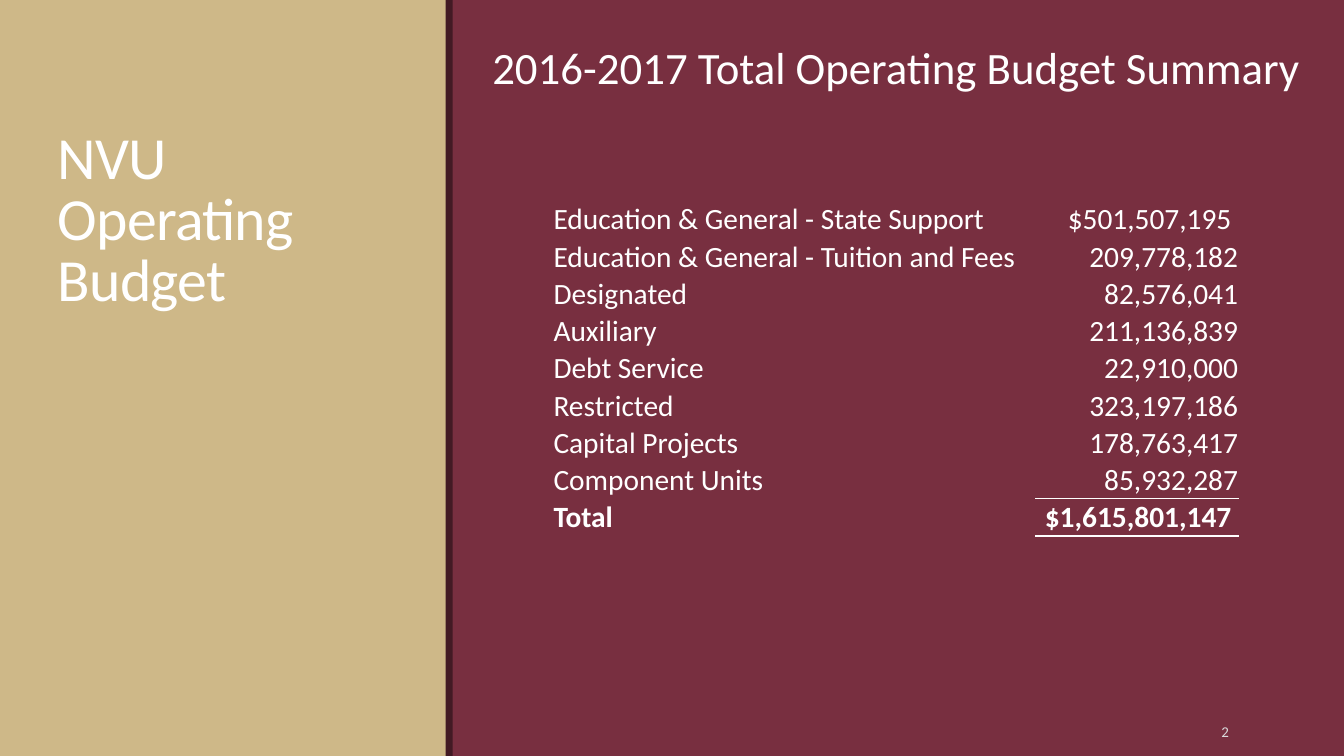
from dataclasses import dataclass

from lxml import etree
from pptx import Presentation
from pptx.dml.color import RGBColor
from pptx.enum.shapes import MSO_SHAPE
from pptx.enum.text import MSO_ANCHOR, PP_ALIGN
from pptx.oxml.ns import qn
from pptx.util import Inches, Pt

RECT = MSO_SHAPE.RECTANGLE
TOP, MIDDLE, BOTTOM = MSO_ANCHOR.TOP, MSO_ANCHOR.MIDDLE, MSO_ANCHOR.BOTTOM
LEFT, CENTER, RIGHT = PP_ALIGN.LEFT, PP_ALIGN.CENTER, PP_ALIGN.RIGHT

FONT = "Calibri"
WHITE = "FFFFFF"
NO_STYLE_NO_GRID = "{2D5ABB26-0587-4C30-8999-92F81FD0307C}"


@dataclass
class Panel:
    left: float
    width: float
    color: str


@dataclass
class Label:
    text: str
    box: tuple[float, float, float, float]
    size: float
    align: PP_ALIGN
    anchor: MSO_ANCHOR
    color: str = WHITE
    inset: tuple[float, float] = (0.07, 0.04)
    line_spacing: float = 1.0
    tracking: float = 0


@dataclass
class BudgetLine:
    name: str
    amount: str
    bold: bool = False
    rule_above: float = 0
    rule_below: float = 0


PANELS = [Panel(0, 4.43, "CEB888"), Panel(4.42, 0.07, "421A24")]

LABELS = [
    Label("NVU \vOperating Budget", (0.5, 0.65, 3.65, 2.5), 42.7, LEFT, BOTTOM,
          line_spacing=0.85, tracking=-0.5),
    Label("2016-2017 Total Operating Budget Summary", (4.69, 0.34, 8.4, 0.64),
          32, CENTER, TOP, inset=(0.1, 0.05)),
    Label("2", (10.83, 7.06, 1.43, 0.4), 10.7, RIGHT, MIDDLE, color="D9D9DB"),
]

BUDGET = [
    BudgetLine("Education & General - State Support", "$501,507,195 "),
    BudgetLine("Education & General - Tuition and Fees", "209,778,182"),
    BudgetLine("Designated", "82,576,041"),
    BudgetLine("Auxiliary", "211,136,839"),
    BudgetLine("Debt Service", "22,910,000"),
    BudgetLine("Restricted", "323,197,186"),
    BudgetLine("Capital Projects", "178,763,417"),
    BudgetLine("Component Units", "85,932,287", rule_below=1),
    BudgetLine("Total", "$1,615,801,147 ", bold=True, rule_above=1, rule_below=2.25),
]
COLUMN_WIDTHS = (4.79, 2.02)
ROW_HEIGHT = 0.37


def rgb(color: str) -> RGBColor:
    return RGBColor.from_string(color)


def style_paragraph(p, size: float, color: str, align: PP_ALIGN, bold: bool = False) -> None:
    p.alignment = align
    p.font.name = FONT
    p.font.size = Pt(size)
    p.font.bold = bold
    p.font.color.rgb = rgb(color)


def add_panel(s, panel: Panel, height: int) -> None:
    sp = s.shapes.add_shape(RECT, Inches(panel.left), 0, Inches(panel.width), height)
    sp.shadow.inherit = False
    sp.fill.solid()
    sp.fill.fore_color.rgb = rgb(panel.color)
    sp.line.fill.background()


def add_label(s, label: Label) -> None:
    tf = s.shapes.add_textbox(*map(Inches, label.box)).text_frame
    tf.word_wrap = True
    tf.vertical_anchor = label.anchor
    tf.margin_left = tf.margin_right = Inches(label.inset[0])
    tf.margin_top = tf.margin_bottom = Inches(label.inset[1])
    p = tf.paragraphs[0]
    p.text = label.text
    p.line_spacing = label.line_spacing
    style_paragraph(p, label.size, label.color, label.align)
    if label.tracking:
        for r in p.runs:
            r._r.get_or_add_rPr().set("spc", str(round(label.tracking * 100)))


def add_rule(cell, side: str, width: float) -> None:
    tc_pr = cell._tc.get_or_add_tcPr()
    ln = etree.SubElement(tc_pr, qn(f"a:ln{side}"), w=str(Pt(width)))
    fill = etree.SubElement(ln, qn("a:solidFill"))
    etree.SubElement(fill, qn("a:srgbClr"), val=WHITE)


def fill_cell(cell, text: str, align: PP_ALIGN, bold: bool) -> None:
    cell.vertical_anchor = MIDDLE
    cell.margin_left = cell.margin_right = cell.margin_top = Inches(0.01)
    cell.margin_bottom = 0
    p = cell.text_frame.paragraphs[0]
    p.text = text
    style_paragraph(p, 21, WHITE, align, bold)


def add_budget_table(s, lines: list[BudgetLine]) -> None:
    frame = s.shapes.add_table(len(lines), len(COLUMN_WIDTHS), Inches(5.48), Inches(1.99),
                               Inches(sum(COLUMN_WIDTHS)), Inches(ROW_HEIGHT * len(lines)))
    table = frame.table
    table.first_row = table.horz_banding = False
    table._tbl.tblPr.find(qn("a:tableStyleId")).text = NO_STYLE_NO_GRID
    for column, width in zip(table.columns, COLUMN_WIDTHS):
        column.width = Inches(width)
    for i, line in enumerate(lines):
        table.rows[i].height = Inches(ROW_HEIGHT)
        name, amount = table.cell(i, 0), table.cell(i, 1)
        fill_cell(name, line.name, LEFT, line.bold)
        fill_cell(amount, line.amount, RIGHT, line.bold)
        for side, width in (("T", line.rule_above), ("B", line.rule_below)):
            if width:
                add_rule(amount, side, width)
        for cell in (name, amount):
            cell.fill.background()


def main() -> None:
    prs = Presentation()
    prs.slide_width, prs.slide_height = Inches(13.33), Inches(7.5)
    s = prs.slides.add_slide(prs.slide_layouts[6])
    s.background.fill.solid()
    s.background.fill.fore_color.rgb = rgb("782F40")
    for panel in PANELS:
        add_panel(s, panel, prs.slide_height)
    for label in LABELS:
        add_label(s, label)
    add_budget_table(s, BUDGET)
    prs.save("out.pptx")


if __name__ == "__main__":
    main()
